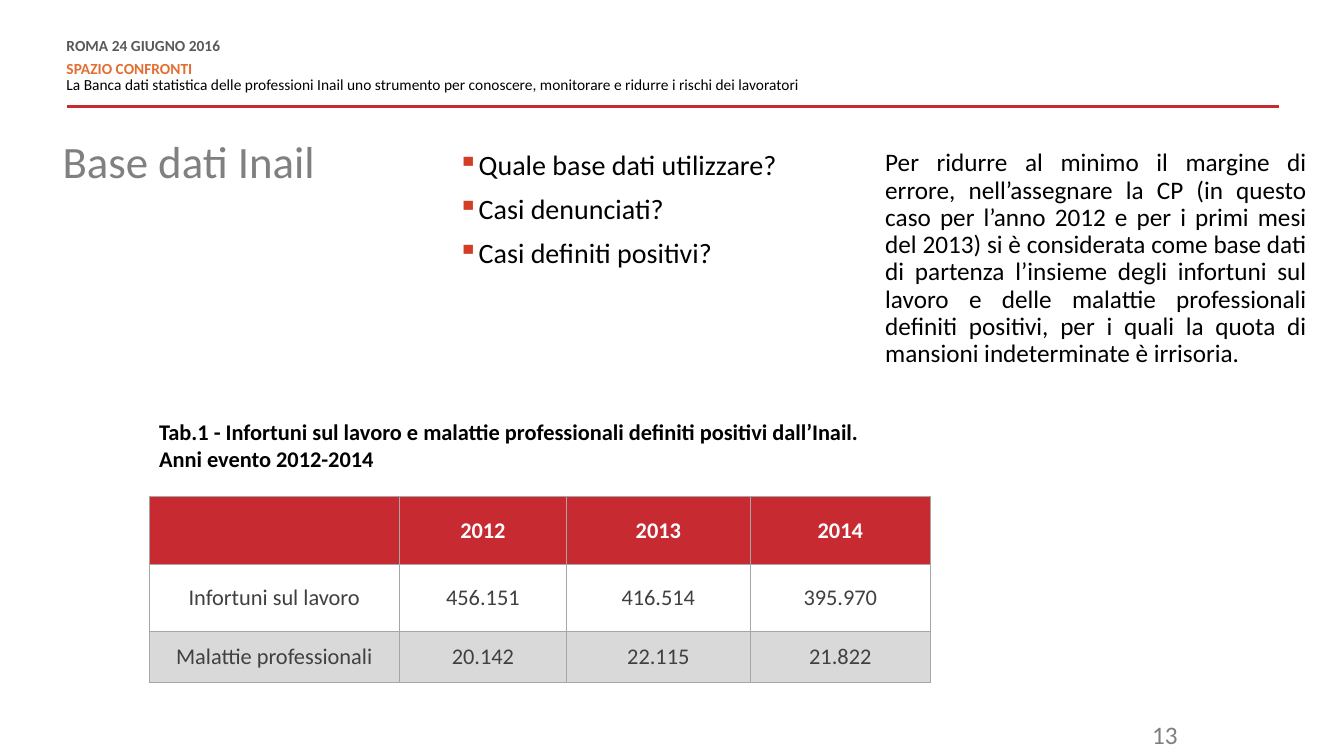
from dataclasses import dataclass

import pptx
import pptx.dml.color
import pptx.enum.shapes
import pptx.enum.text
import pptx.oxml
import pptx.oxml.ns
import pptx.util
from pptx.util import Inches

ALIGN = pptx.enum.text.PP_ALIGN
AUTO_SIZE = pptx.enum.text.MSO_AUTO_SIZE
RED = "C72A31"
BLACK = "000000"
DARK_GREY = "404040"
BORDER_GREY = "A6A6A6"
BULLET_RED = "D43D25"
BULLET_INDENT = 0.19

COLUMN_WIDTHS = [2.48, 1.66, 1.82, 1.79]
ROW_HEIGHTS = [0.67, 0.67, 0.5]
CASES = [
    ["", "2012", "2013", "2014"],
    ["Infortuni sul lavoro", "456.151", "416.514", "395.970"],
    ["Malattie professionali", "20.142", "22.115", "21.822"],
]


@dataclass
class Line:
    """One paragraph and its formatting."""
    text: str
    size: float
    color: str = BLACK
    bold: bool = False
    align: ALIGN = ALIGN.LEFT
    spacing: float | pptx.util.Length | None = None
    before: float = 0
    after: float = 0
    bullet: str = ""


@dataclass
class TextBlock:
    left: float
    top: float
    width: float
    height: float
    lines: list[Line]
    inset: bool = False
    grow: bool = False


@dataclass
class RowStyle:
    fill: str | None
    color: str
    bold: bool = False


ROW_STYLES = [
    RowStyle(RED, "FFFFFF", True),
    RowStyle(None, DARK_GREY),
    RowStyle("D9D9D9", DARK_GREY),
]

HEADER_SPACING = pptx.util.Pt(10.8)
TITLE = TextBlock(0.62, 1.39, 3.92, 1.13, [
    Line("Base dati Inail", 32, "808080", spacing=0.9),
])
QUESTIONS = ["Quale base dati utilizzare?", "Casi denunciati?", "Casi definiti positivi?"]
TEXT_BLOCKS = [
    TextBlock(0.66, 0.39, 8.34, 0.55, [
        Line("ROMA 24 GIUGNO 2016", 11, "595959", True, spacing=HEADER_SPACING, after=6),
        Line("SPAZIO CONFRONTI", 11, "E26F31", True, spacing=HEADER_SPACING),
        Line("La Banca dati statistica delle professioni Inail uno strumento per conoscere, "
             "monitorare e ridurre i rischi dei lavoratori", 11, spacing=HEADER_SPACING),
    ], grow=True),
    TextBlock(8.78, 7.09, 3, 0.4, [Line("13", 18, "7F7F7F", align=ALIGN.RIGHT)], inset=True),
    TextBlock(8.78, 1.49, 4.18, 2.46, [
        Line("Per ridurre al minimo il margine di errore, nell’assegnare la CP (in questo caso "
             "per l’anno 2012 e per i primi mesi del 2013) si è considerata come base dati di "
             "partenza l’insieme degli infortuni sul lavoro e delle malattie professionali "
             "definiti positivi, per i quali la quota di mansioni indeterminate è irrisoria.",
             18, align=ALIGN.JUSTIFY, spacing=0.9),
    ]),
    TextBlock(4.54, 1.5, 3.91, 2.09, [
        Line(question, 20, spacing=0.9, before=10 if index else 0, bullet="▪")
        for index, question in enumerate(QUESTIONS)
    ]),
    TextBlock(1.48, 4.1, 7.93, 0.64, [
        Line("Tab.1 - Infortuni sul lavoro e malattie professionali definiti positivi "
             "dall’Inail.", 16, bold=True),
        Line("Anni evento 2012-2014", 16, bold=True),
    ], inset=True, grow=True),
]


def rgb(color: str) -> pptx.dml.color.RGBColor:
    return pptx.dml.color.RGBColor.from_string(color)


def add_child(parent, xml: str) -> None:
    """Append an element written in the a: namespace."""
    tag, rest = xml[:-2].partition(">")[0], xml[len(xml[:-2].partition(">")[0]):]
    parent.append(pptx.oxml.parse_xml(f"{tag} {pptx.oxml.ns.nsdecls('a')}{rest}"))


def add_bullet(para, character: str) -> None:
    properties = para._p.get_or_add_pPr()
    indent = Inches(BULLET_INDENT)
    properties.set("marL", str(indent))
    properties.set("indent", str(-indent))
    add_child(properties, f'<a:buClr><a:srgbClr val="{BULLET_RED}"/></a:buClr>')
    add_child(properties, f'<a:buChar char="{character}"/>')


def write_line(para, line: Line) -> None:
    para.alignment = line.align
    para.space_before = pptx.util.Pt(line.before)
    para.space_after = pptx.util.Pt(line.after)
    if line.spacing is not None:
        para.line_spacing = line.spacing
    if line.bullet:
        add_bullet(para, line.bullet)
    span = para.add_run()
    span.text = line.text
    span.font.name = "Calibri"
    span.font.size = pptx.util.Pt(line.size)
    span.font.bold = line.bold
    span.font.color.rgb = rgb(line.color)


def fill_text_block(box, block: TextBlock) -> None:
    box.left, box.top = Inches(block.left), Inches(block.top)
    box.width, box.height = Inches(block.width), Inches(block.height)
    frame = box.text_frame
    frame.word_wrap = True
    frame.auto_size = AUTO_SIZE.SHAPE_TO_FIT_TEXT if block.grow else AUTO_SIZE.NONE
    frame.vertical_anchor = pptx.enum.text.MSO_ANCHOR.TOP
    if not block.inset:
        frame.margin_left = frame.margin_right = frame.margin_top = frame.margin_bottom = 0
    for index, line in enumerate(block.lines):
        write_line(frame.add_paragraph() if index else frame.paragraphs[0], line)


def add_header_rule(page) -> None:
    rule = page.shapes.add_connector(
        pptx.enum.shapes.MSO_CONNECTOR.STRAIGHT,
        Inches(12.69), Inches(1.06), Inches(0.66), Inches(1.06))
    rule.line.color.rgb = rgb(RED)
    rule.line.width = pptx.util.Pt(2)
    add_child(rule._element.spPr, "<a:effectLst/>")


def format_cell(cell, text: str, style: RowStyle) -> None:
    properties = cell._tc.get_or_add_tcPr()
    for side in "LRTB":
        add_child(properties, f'<a:ln{side} w="{pptx.util.Pt(0.75)}"><a:solidFill>'
                              f'<a:srgbClr val="{BORDER_GREY}"/></a:solidFill></a:ln{side}>')
    if style.fill:
        cell.fill.solid()
        cell.fill.fore_color.rgb = rgb(style.fill)
    else:
        cell.fill.background()
    cell.vertical_anchor = pptx.enum.text.MSO_ANCHOR.MIDDLE
    if text:
        write_line(cell.text_frame.paragraphs[0],
                   Line(text, 16, style.color, style.bold, ALIGN.CENTER))


def add_cases_table(page) -> None:
    table = page.shapes.add_table(
        len(CASES), len(COLUMN_WIDTHS), Inches(1.48), Inches(4.93),
        Inches(sum(COLUMN_WIDTHS)), Inches(sum(ROW_HEIGHTS))).table
    table.horz_banding = False
    for column, width in zip(table.columns, COLUMN_WIDTHS):
        column.width = Inches(width)
    for row, height, texts, style in zip(table.rows, ROW_HEIGHTS, CASES, ROW_STYLES):
        row.height = Inches(height)
        for cell, text in zip(row.cells, texts):
            format_cell(cell, text, style)


def main() -> None:
    deck = pptx.Presentation()
    deck.slide_width, deck.slide_height = Inches(13.33), Inches(7.5)
    page = deck.slides.add_slide(deck.slide_layouts[5])
    fill_text_block(page.shapes.title, TITLE)
    add_header_rule(page)
    for block in TEXT_BLOCKS:
        fill_text_block(page.shapes.add_textbox(0, 0, 0, 0), block)
    add_cases_table(page)
    deck.save("out.pptx")


if __name__ == "__main__":
    main()
